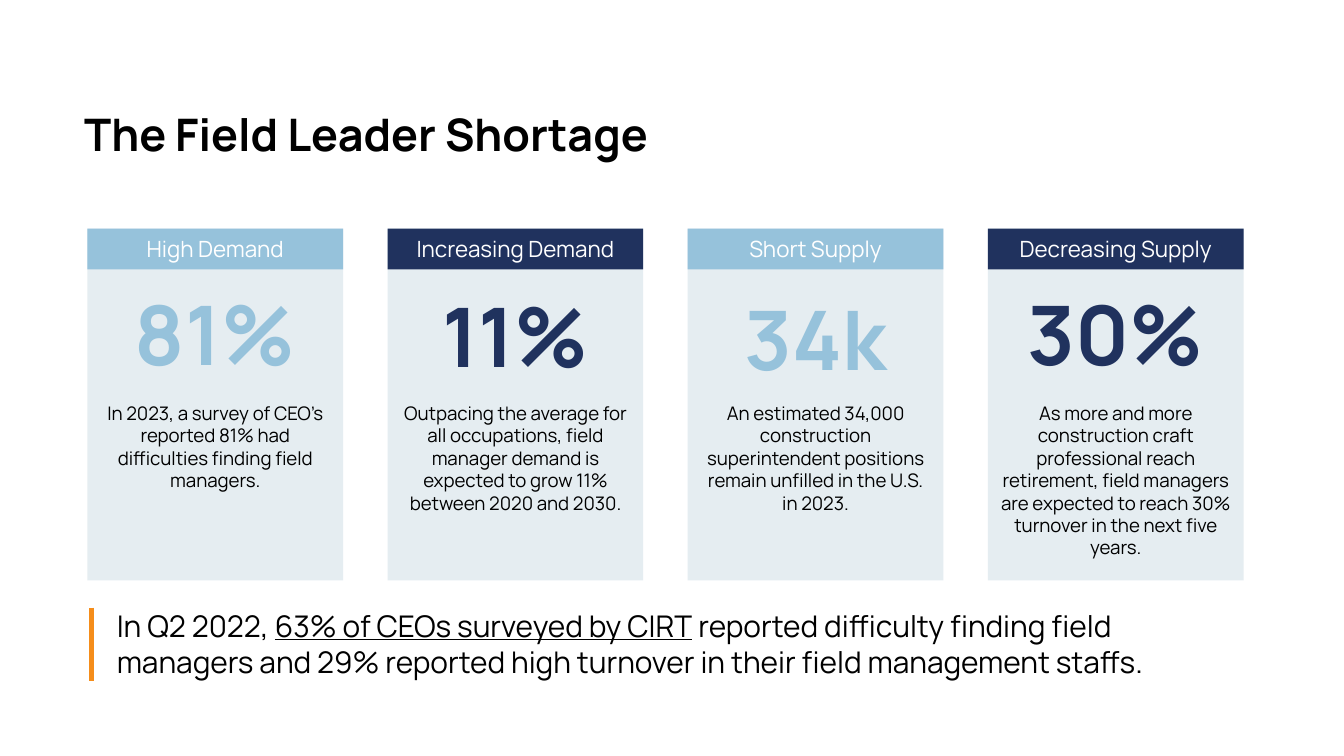
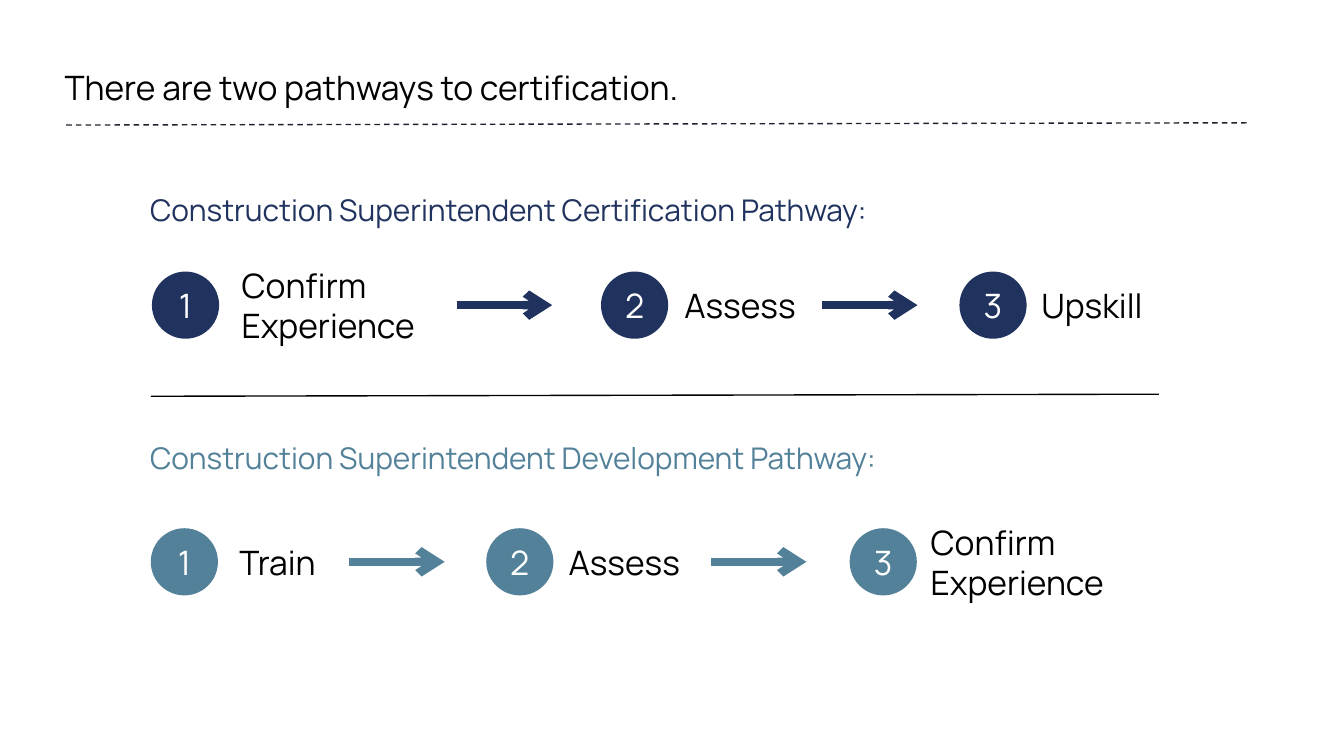
import pptx
import pptx.util
import pptx.dml.color
import pptx.enum.dml
import pptx.enum.shapes
import pptx.enum.text
import pptx.oxml
import pptx.oxml.ns

Pt = pptx.util.Pt
Shape = pptx.enum.shapes.MSO_SHAPE
Anchor = pptx.enum.text.MSO_ANCHOR
Align = pptx.enum.text.PP_ALIGN
Fit = pptx.enum.text.MSO_AUTO_SIZE
Dash = pptx.enum.dml.MSO_LINE


class Theme:
    font = "Manrope"
    # Colours
    black, white, ink = "000000", "FFFFFF", "1D212E"
    navy, sky, teal = "20325E", "96C2DB", "528199"
    pale, orange = "E5EDF1", "F58D1A"
    # Type sizes
    title, stat, step, lead, head, body = 24, 44, 18, 16, 12, 10


def add_box(slide, box, runs=(), size=10, color=Theme.black, bold=False,
            kind=None, fill=None, align=Align.LEFT, anchor=Anchor.TOP,
            pad=(7.2, 3.6), fit=Fit.NONE):
    """Add a text box, or a filled shape; runs are (text, underline) pairs."""
    place = [Pt(n) for n in box]
    if kind is None:
        shape = slide.shapes.add_textbox(*place)
    else:
        shape = slide.shapes.add_shape(kind, *place)
        shape.shadow.inherit = False
        shape.fill.solid()
        shape.fill.fore_color.rgb = pptx.dml.color.RGBColor.from_string(fill)
        shape.line.fill.background()
    frame = shape.text_frame
    side, edge = Pt(pad[0]), Pt(pad[1])
    form = {"word_wrap": True, "auto_size": fit, "vertical_anchor": anchor,
            "margin_left": side, "margin_right": side,
            "margin_top": edge, "margin_bottom": edge}
    for key, value in form.items():
        setattr(frame, key, value)
    para = frame.paragraphs[0]
    para.alignment = align
    for text, under in runs:
        run = para.add_run()
        run.text = text
        style = {"name": Theme.font, "size": Pt(size), "bold": bold,
                 "underline": under}
        for key, value in style.items():
            setattr(run.font, key, value)
        run.font.color.rgb = pptx.dml.color.RGBColor.from_string(color)


def add_line(slide, ends, color, width, dash=None, arrow=False):
    link = slide.shapes.add_connector(
        pptx.enum.shapes.MSO_CONNECTOR.STRAIGHT, *[Pt(n) for n in ends])
    link.line.color.rgb = pptx.dml.color.RGBColor.from_string(color)
    link.line.width = Pt(width)
    if dash:
        link.line.dash_style = dash
    if arrow:
        tip = pptx.oxml.parse_xml(
            f'<a:tailEnd {pptx.oxml.ns.nsdecls("a")} type="arrow"/>')
        link.line._get_or_add_ln().append(tip)
    link._element.spPr.append(pptx.oxml.parse_xml(
        f'<a:effectLst {pptx.oxml.ns.nsdecls("a")}/>'))


deck = pptx.Presentation()
deck.slide_width, deck.slide_height = Pt(720), Pt(405)
blank = deck.slide_layouts[6]

# Slide 1: the shortage in four cards
slide = deck.slides.add_slide(blank)
add_box(slide, (38, 53.5, 546, 36), [("The Field Leader Shortage", False)],
        Theme.title, bold=True, fit=Fit.SHAPE_TO_FIT_TEXT)

cards = [
    ("High Demand", "81%", 148.5, 55, Theme.sky,
     "In 2023, a survey of CEO’s reported 81% had difficulties finding field "
     "managers."),
    ("Increasing Demand", "11%", 149.5, 68, Theme.navy,
     "Outpacing the average for all occupations, field manager demand is "
     "expected to grow 11% between 2020 and 2030."),
    ("Short Supply", "34k", 151, 68, Theme.sky,
     "An estimated 34,000 construction superintendent positions remain "
     "unfilled in the U.S. in 2023."),
    ("Decreasing Supply", "30%", 148.5, 92, Theme.navy,
     "As more and more construction craft professional reach retirement, "
     "field managers are expected to reach 30% turnover in the next five "
     "years."),
]
wide, pitch, top = 137, 160.8, 122.5
for i, (head, stat, high, tall, color, note) in enumerate(cards):
    left = 46.8 + i * pitch
    add_box(slide, (left, top, wide, 188.5), kind=Shape.RECTANGLE,
            fill=Theme.pale)
    mid = {"align": Align.CENTER, "fit": Fit.SHAPE_TO_FIT_TEXT}
    add_box(slide, (left + 2.2, high, 132.5, 60.5), [(stat, False)],
            Theme.stat, color, bold=True, **mid)
    add_box(slide, (left, 211.7, wide, tall), [(note, False)],
            Theme.body, **mid)
    add_box(slide, (left, top, wide, 21.8), [(head, False)], Theme.head,
            Theme.white, kind=Shape.RECTANGLE, fill=color, **mid)

# Closing fact beside its bar
fact = [("In Q2 2022, ", False), ("63% of CEOs surveyed by CIRT", True),
        (" reported difficulty finding field managers and 29% reported high "
         "turnover in their field management staffs.", False)]
add_box(slide, (55.5, 325.5, 617, 39), fact, Theme.lead, anchor=Anchor.MIDDLE)
add_line(slide, (49, 325.5, 49, 365), Theme.orange, 3)

# Slide 2: two pathways
slide = deck.slides.add_slide(blank)
label = {"anchor": Anchor.MIDDLE, "pad": (7.2, 7.2)}
add_box(slide, (27.5, 13.7, 439, 66),
        [("There are two pathways to certification.", False)],
        Theme.step, **label)
add_line(slide, (35.5, 67, 668, 65.8), Theme.ink, 0.75, dash=Dash.DASH)

# Each row: name, colour, top of name, middle of steps,
# steps as (circle left, label left, label), arrow starts
paths = [
    ("Construction Superintendent Certification Pathway:", Theme.navy,
     99.4, 163.5,
     [(81.4, 122.4, "Confirm Experience"), (322, 359.5, "Assess"),
      (514, 550.8, "Upskill")], (244.8, 440.5)),
    ("Construction Superintendent Development Pathway:", Theme.teal,
     231.8, 301,
     [(80.8, 121.2, "Train"), (260.5, 297.5, "Assess"),
      (455.2, 491.5, "Confirm Experience")], (187.2, 381)),
]
disc = 36
for name, color, top, mid, steps, starts in paths:
    add_box(slide, (73.3, top, 541, 26.6), [(name, False)], Theme.lead, color,
            fit=Fit.SHAPE_TO_FIT_TEXT)
    for i, (left, start, text) in enumerate(steps):
        wide = 168 if i else 139
        add_box(slide, (start, mid - 33, wide, 66), [(text, False)],
                Theme.step, **label)
        add_box(slide, (left, mid - disc / 2, disc, disc),
                [(str(i + 1), False)], Theme.step, Theme.white,
                kind=Shape.OVAL, fill=color, align=Align.CENTER,
                anchor=Anchor.MIDDLE, pad=(0, 0))
    for start in starts:
        add_line(slide, (start, mid, start + 51, mid), color, 4.5, arrow=True)

# Rule between the pathways
add_line(slide, (80.8, 212.3, 620.8, 211.2), Theme.black, 0.75)

deck.save("out.pptx")
